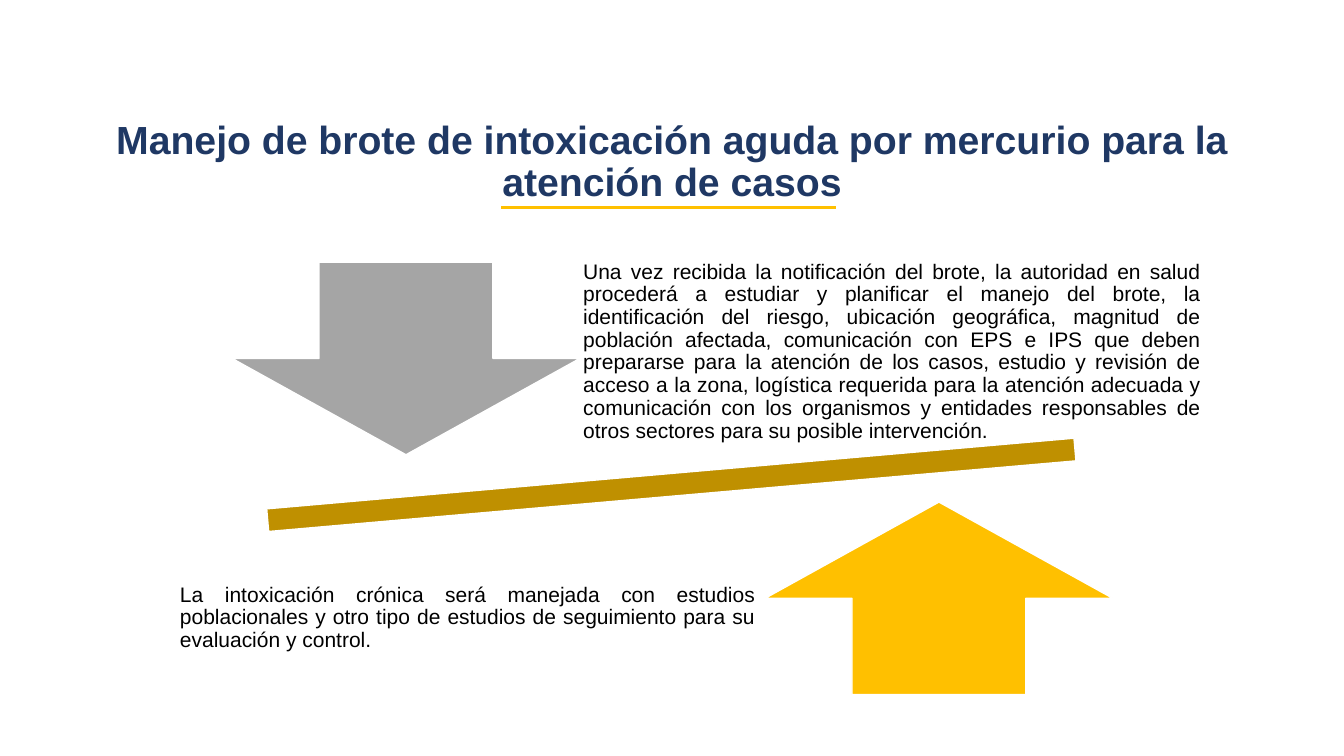
from lxml.etree import SubElement
from pptx import Presentation
from pptx.dml.color import RGBColor
from pptx.enum.shapes import MSO_CONNECTOR, MSO_SHAPE
from pptx.enum.text import MSO_ANCHOR, PP_ALIGN
from pptx.oxml.ns import qn
from pptx.util import Pt

TITLE = "Manejo de brote de intoxicación aguda por mercurio para la atención de casos"
TITLE_AREA = (66, 62, 828, 109)
UNDERLINE = (358, 148.5, 597, 148.5)

# kind, area (left, top, width, height), rotation, fill
SHAPES = [
    (MSO_SHAPE.MATH_MINUS, (85.7, 311.8, 787.7, 69.1), 355, "BF9000"),
    (MSO_SHAPE.DOWN_ARROW, (165.8, 187.3, 248.4, 137.5), 0, "A5A5A5"),
    (MSO_SHAPE.UP_ARROW, (546.5, 358.6, 248.4, 137.5), 0, "FFC000"),
]
TEXTS = [
    ("Una vez recibida la notificación del brote, la autoridad en salud procederá a estudiar "
     "y planificar el manejo del brote, la identificación del riesgo, ubicación geográfica, "
     "magnitud de población afectada, comunicación con EPS e IPS que deben prepararse para la "
     "atención de los casos, estudio y revisión de acceso a la zona, logística requerida para "
     "la atención adecuada y comunicación con los organismos y entidades responsables de otros "
     "sectores para su posible intervención.", (408.2, 179.3, 457.9, 144)),
    ("La intoxicación crónica será manejada con estudios poblacionales y otro tipo de estudios "
     "de seguimiento para su evaluación y control.", (120.2, 387.4, 427.7, 108)),
]
TITLE_FONT = {"name": "Arial", "size": Pt(28), "bold": True}
BODY_FONT = {"name": "Arial", "size": Pt(15), "bold": False}
BODY_FRAME = {side: Pt(8.4) for side in
              ("margin_left", "margin_top", "margin_right", "margin_bottom")}


def color(value):
    return RGBColor.from_string(value)


def points(values):
    return [Pt(value) for value in values]


def apply(target, formats):
    for name, value in formats.items():
        setattr(target, name, value)


def write(box, text, alignment, font, font_color):
    frame = box.text_frame
    apply(frame, {"word_wrap": True, "vertical_anchor": MSO_ANCHOR.MIDDLE})
    para = frame.paragraphs[0]
    apply(para, {"alignment": alignment, "line_spacing": 0.9})
    span = para.add_run()
    span.text = text
    apply(span.font, font)
    span.font.color.rgb = color(font_color)


def add_title(page):
    title = page.shapes.title
    apply(title, dict(zip(("left", "top", "width", "height"), points(TITLE_AREA))))
    write(title, TITLE, PP_ALIGN.CENTER, TITLE_FONT, "1F3864")


def add_underline(page):
    line = page.shapes.add_connector(MSO_CONNECTOR.STRAIGHT, *points(UNDERLINE))
    line.line.color.rgb = color("FFC000")
    line.line.width = Pt(2.25)
    SubElement(line._element.spPr, qn("a:effectLst"))


def add_shape(page, kind, area, rotation, fill):
    shape = page.shapes.add_shape(kind, *points(area))
    shape.rotation = rotation
    shape.shadow.inherit = False
    shape.fill.solid()
    shape.fill.fore_color.rgb = color(fill)
    shape.line.color.rgb = color("FFFFFF")
    shape.line.width = Pt(1)


def add_text(page, text, area):
    box = page.shapes.add_textbox(*points(area))
    apply(box.text_frame, BODY_FRAME)
    write(box, text, PP_ALIGN.JUSTIFY, BODY_FONT, "000000")


def main():
    deck = Presentation()
    deck.slide_width, deck.slide_height = Pt(960), Pt(540)
    page = deck.slides.add_slide(deck.slide_layouts[5])
    add_title(page)
    add_underline(page)
    for shape in SHAPES:
        add_shape(page, *shape)
    for text in TEXTS:
        add_text(page, *text)
    deck.save("out.pptx")


if __name__ == "__main__":
    main()
